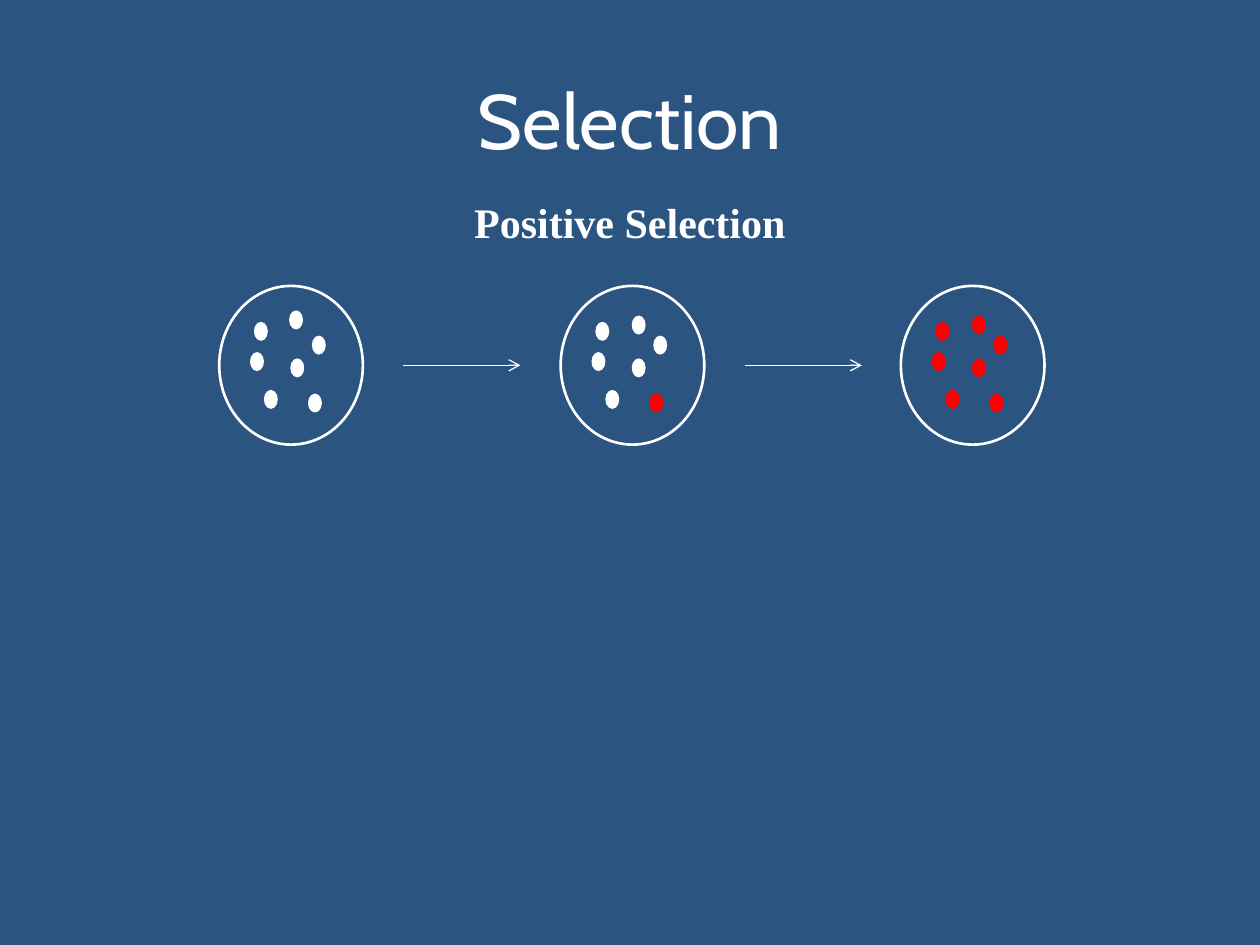
"""Build a slide showing positive selection across three dishes of cells."""
from lxml.etree import SubElement
from pptx import Presentation
from pptx.dml.color import RGBColor
from pptx.enum.shapes import MSO_CONNECTOR, MSO_SHAPE
from pptx.enum.text import MSO_ANCHOR, PP_ALIGN
from pptx.oxml.ns import qn
from pptx.util import Pt

NAVY = RGBColor(0x2B, 0x54, 0x81)
WHITE = RGBColor(0xFF, 0xFF, 0xFF)
RED = RGBColor(0xFF, 0x00, 0x00)

SLIDE_WIDTH, SLIDE_HEIGHT = 720, 540
HEADINGS = [
    ("Selection", 29.5, 77, 44, "Cabin", False, MSO_ANCHOR.MIDDLE),
    ("Positive Selection", 108.7, 36, 24, "Times New Roman", True, MSO_ANCHOR.TOP),
]

DISH_TOP, DISH_WIDTH, DISH_HEIGHT = 163.4, 82.1, 90.7
CELL_WIDTH, CELL_HEIGHT = 7.2, 10.1
ARROW_OFFSET, ARROW_LENGTH = 105.1, 67
FIRST_TOP_CELL = (40.3, 14.4)
LATER_TOP_CELL = (41, 17.3)
SHARED_CELLS = [(53.3, 28.8), (41, 41.8), (25.9, 59.8), (20.2, 20.9), (18, 38.2)]
MUTANT_CELL = (51.1, 61.9)
DISHES = [
    (125.3, FIRST_TOP_CELL, WHITE, WHITE, True),
    (320.4, LATER_TOP_CELL, WHITE, RED, True),
    (514.8, LATER_TOP_CELL, RED, RED, False),
]


def add_heading(slide, wording, top, height, size, font_name, bold, anchor):
    heading = slide.shapes.add_textbox(0, Pt(top), Pt(SLIDE_WIDTH), Pt(height))
    frame = heading.text_frame
    frame.word_wrap = True
    frame.vertical_anchor = anchor
    paragraph = frame.paragraphs[0]
    paragraph.text = wording
    paragraph.alignment = PP_ALIGN.CENTER
    font = paragraph.font
    font.name, font.size, font.bold = font_name, Pt(size), bold
    font.color.rgb = WHITE


def add_ellipse(slide, left, top, width, height, line_color, line_width, fill=None):
    ellipse = slide.shapes.add_shape(
        MSO_SHAPE.OVAL, Pt(left), Pt(top), Pt(width), Pt(height))
    ellipse.shadow.inherit = False
    ellipse.line.color.rgb = line_color
    ellipse.line.width = Pt(line_width)
    if fill is None:
        ellipse.fill.background()
    else:
        ellipse.fill.solid()
        ellipse.fill.fore_color.rgb = fill


def add_arrow(slide, left, middle):
    arrow = slide.shapes.add_connector(
        MSO_CONNECTOR.STRAIGHT, Pt(left), Pt(middle), Pt(left + ARROW_LENGTH), Pt(middle))
    arrow.line.color.rgb = WHITE
    arrow.line.width = Pt(0.75)
    SubElement(arrow.line._get_or_add_ln(), qn("a:tailEnd"), type="arrow")
    SubElement(arrow._element.spPr, qn("a:effectLst"))


def add_dish(slide, left, top_cell, cell_color, mutant_color, leads_on):
    add_ellipse(slide, left, DISH_TOP, DISH_WIDTH, DISH_HEIGHT, WHITE, 1.5)
    cells = [(cell, cell_color) for cell in [top_cell, *SHARED_CELLS]]
    for (x, y), color in [*cells, (MUTANT_CELL, mutant_color)]:
        add_ellipse(slide, left + x, DISH_TOP + y, CELL_WIDTH, CELL_HEIGHT, color, 0.75, color)
    if leads_on:
        add_arrow(slide, left + ARROW_OFFSET, DISH_TOP + DISH_HEIGHT / 2)


def main():
    presentation = Presentation()
    presentation.slide_width = Pt(SLIDE_WIDTH)
    presentation.slide_height = Pt(SLIDE_HEIGHT)
    slide = presentation.slides.add_slide(presentation.slide_layouts[6])
    slide.background.fill.solid()
    slide.background.fill.fore_color.rgb = NAVY
    for heading in HEADINGS:
        add_heading(slide, *heading)
    for dish in DISHES:
        add_dish(slide, *dish)
    presentation.save("out.pptx")


if __name__ == "__main__":
    main()
